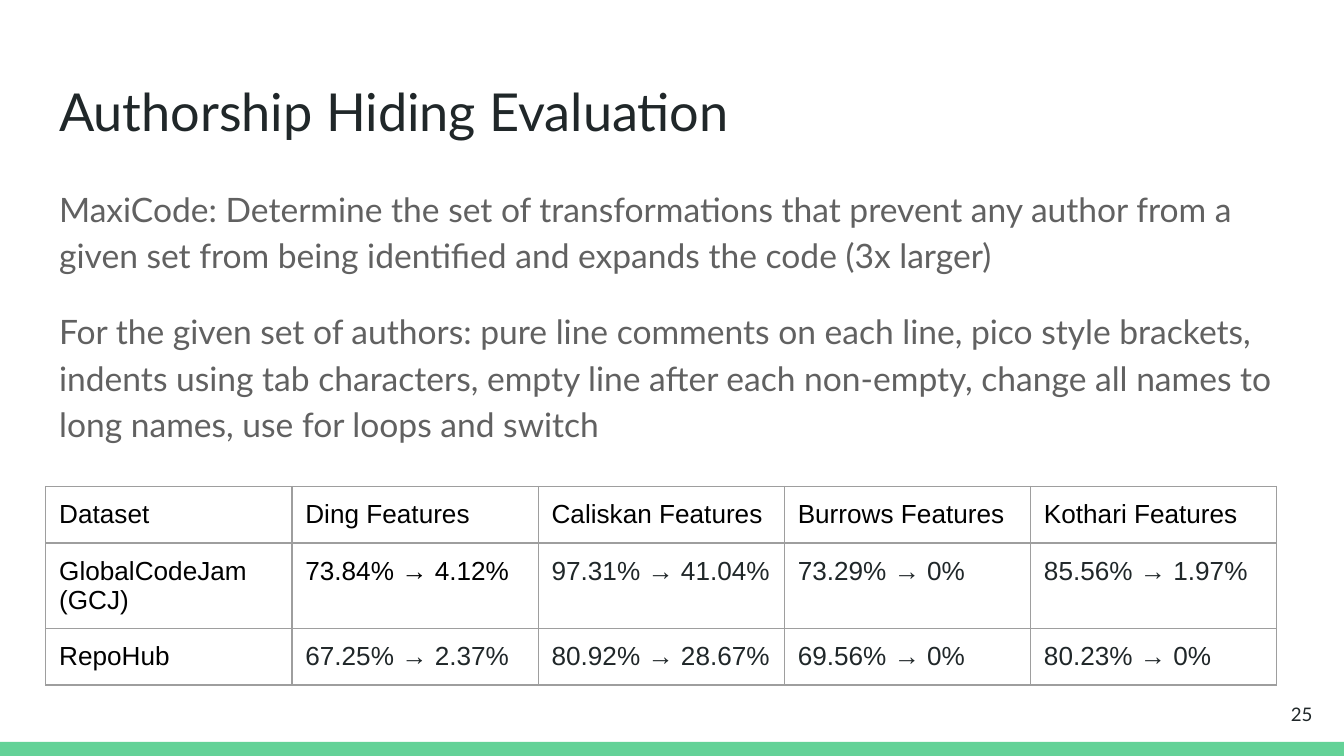
from typing import NamedTuple

from lxml import etree
from pptx import Presentation
from pptx import util as u
from pptx.dml.color import RGBColor
from pptx.enum import shapes, text
from pptx.oxml import ns

PX = 4572  # EMU per px, 200 px to the inch
WIDE, HIGH, INSET = 2000, 1125, 20
DARK, GREY, BLACK = "202729", "616161", "000000"
GREEN, RULE = "63D297", "9E9E9E"


class Box(NamedTuple):
    x: int
    y: int
    w: int
    h: int

    def emu(self) -> list[int]:
        return [n * PX for n in self]


class Font(NamedTuple):
    name: str
    size: int
    color: str


def rgb(color: str) -> RGBColor:
    return RGBColor.from_string(color)


def style(frame, font: Font) -> None:
    for para in frame.paragraphs:
        for run in para.runs:
            run.font.name = font.name
            run.font.size = u.Pt(font.size)
            run.font.bold = False
            run.font.color.rgb = rgb(font.color)


def pad(item) -> None:
    item.margin_left = item.margin_right = INSET * PX
    item.margin_top = item.margin_bottom = INSET * PX


def write(shape, box: Box, words: str, font: Font, align, anchor) -> None:
    shape.left, shape.top, shape.width, shape.height = box.emu()
    frame = shape.text_frame
    frame.text = words
    frame.word_wrap = True
    frame.auto_size = text.MSO_AUTO_SIZE.NONE
    frame.vertical_anchor = anchor
    pad(frame)
    for para in frame.paragraphs:
        para.alignment = align
    style(frame, font)


def flow(frame, line: float, gap: int) -> None:
    """Set unbulleted paragraphs with a gap between them."""
    for i, para in enumerate(frame.paragraphs):
        para.line_spacing = line
        para.space_before = u.Pt(gap if i else 0)
        props = para._p.get_or_add_pPr()
        props.set("marL", "0")
        props.set("indent", "0")
        etree.SubElement(props, ns.qn("a:buNone"))


def edge(cell, color: str, width: float) -> None:
    props = cell._tc.get_or_add_tcPr()
    for i, side in enumerate(("lnL", "lnR", "lnT", "lnB")):
        line = etree.Element(ns.qn(f"a:{side}"), w=str(u.Pt(width)))
        fill = etree.SubElement(line, ns.qn("a:solidFill"))
        etree.SubElement(fill, ns.qn("a:srgbClr"), val=color)
        props.insert(i, line)


def grid(slide, box: Box, rows: list[list[str]]) -> None:
    table = slide.shapes.add_table(len(rows), len(rows[0]), *box.emu()).table
    table.first_row = table.horz_banding = False
    for r, row in enumerate(rows):
        for c, words in enumerate(row):
            cell = table.cell(r, c)
            cell.text = words
            cell.fill.background()
            pad(cell)
            edge(cell, RULE, 0.75)
            plain = r == 0 or c == 0 or (r, c) == (1, 1)
            style(cell.text_frame, Font("Arial", 14, BLACK if plain else DARK))


TITLE = "Authorship Hiding Evaluation"
BODY = [
    "MaxiCode: Determine the set of transformations that prevent any author "
    "from a given set from being identified and expands the code (3x larger)",
    "For the given set of authors: pure line comments on each line, pico style "
    "brackets, indents using tab characters, empty line after each non-empty, "
    "change all names to long names, use for loops and switch",
]
ROWS = [
    ["Dataset", "Ding Features", "Caliskan Features", "Burrows Features",
     "Kothari Features"],
    ["GlobalCodeJam (GCJ)", "73.84% → 4.12%", "97.31% → 41.04%",
     "73.29% → 0%", "85.56% → 1.97%"],
    ["RepoHub", "67.25% → 2.37%", "80.92% → 28.67%", "69.56% → 0%",
     "80.23% → 0%"],
]


def main() -> None:
    deck = Presentation()
    deck.slide_width, deck.slide_height = WIDE * PX, HIGH * PX
    slide = deck.slides.add_slide(deck.slide_layouts[1])
    left, right = text.PP_ALIGN.LEFT, text.PP_ALIGN.RIGHT
    top, middle = text.MSO_ANCHOR.TOP, text.MSO_ANCHOR.MIDDLE

    bar = slide.shapes.add_shape(
        shapes.MSO_SHAPE.RECTANGLE, *Box(0, HIGH - 21, WIDE, 21).emu())
    bar.shadow.inherit = False
    bar.fill.solid()
    bar.fill.fore_color.rgb = rgb(GREEN)
    bar.line.fill.background()

    title, body = slide.placeholders
    write(title, Box(68, 98, 1864, 126), TITLE,
          Font("Lato", 28, DARK), left, top)
    write(body, Box(68, 252, 1864, 748), "\n".join(BODY),
          Font("Lato", 18, GREY), left, top)
    flow(body.text_frame, 1.15, 16)

    grid(slide, Box(68, 724, 1832, 252), ROWS)

    place = Box(1853, 1020, 120, 86)
    number = slide.shapes.add_textbox(*place.emu())
    write(number, place, "25", Font("Lato", 10, DARK), right, middle)

    deck.save("out.pptx")


if __name__ == "__main__":
    main()
